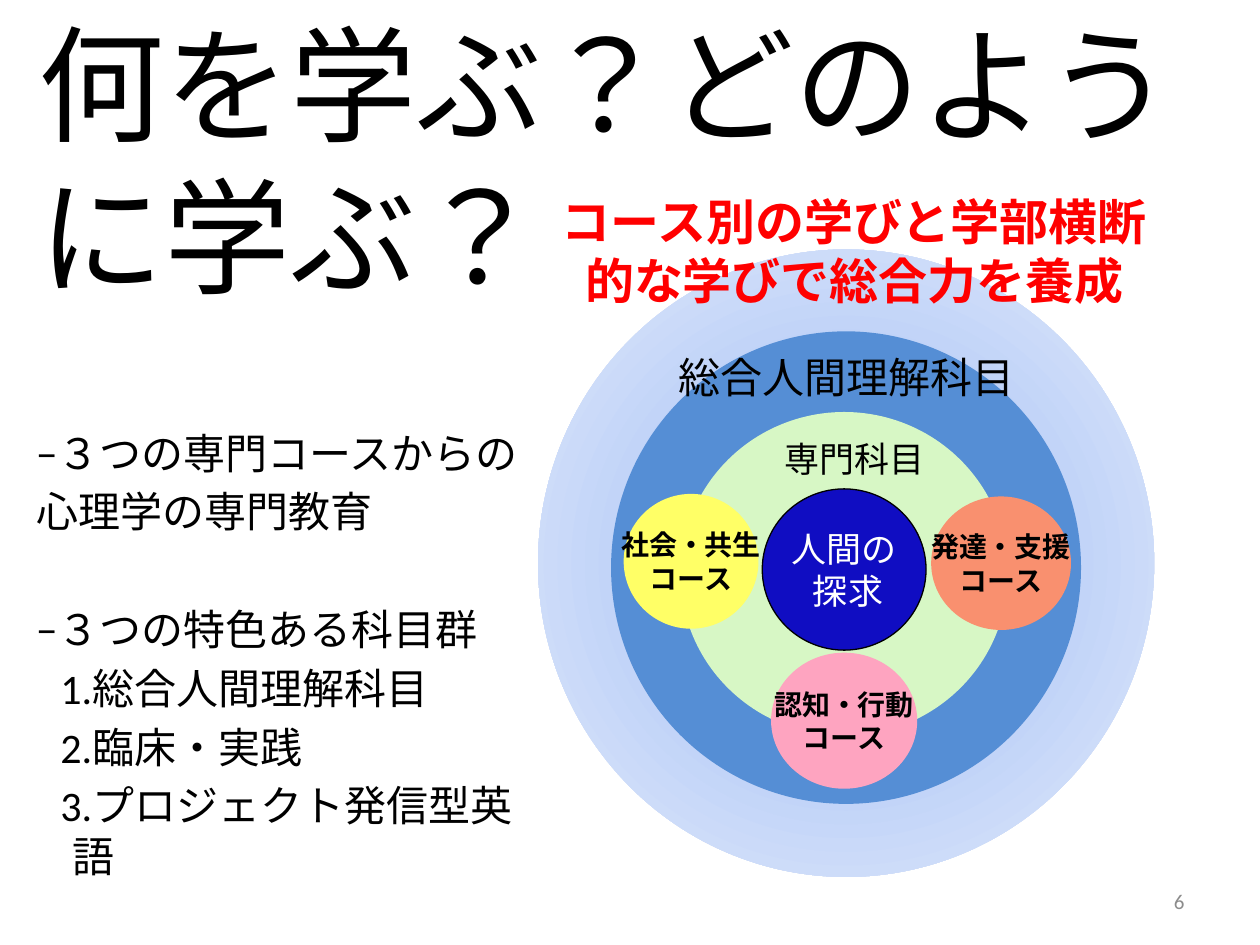
from lxml.etree import SubElement
from pptx import Presentation
from pptx.dml.color import RGBColor
from pptx.enum.lang import MSO_LANGUAGE_ID as Language
from pptx.enum.shapes import MSO_SHAPE
from pptx.enum.text import MSO_ANCHOR as Anchor, PP_ALIGN as Align
from pptx.oxml import parse_xml
from pptx.oxml.ns import nsdecls, qn
from pptx.util import Inches, Pt

COLORS = {
    "black": "000000", "white": "FFFFFF", "red": "FF0000", "gray": "8C8C8C",
    "halo_inner": "98B9F6", "halo_middle": "C0D3F8", "halo_outer": "E0E9FB",
    "blue": "558ED5", "green": "D7F7C5", "pink": "FEA4C0",
    "orange": "F9906F", "yellow": "FFFF66", "navy": "100DC2",
}


def rgb(name):
    return RGBColor.from_string(COLORS[name])


def add_span(para, text, size, color="black", bold=False, font="Arial"):
    span = para.add_run()
    span.text = text
    span.font.name = font
    span.font.size = Pt(size)
    span.font.bold = bold
    span.font.color.rgb = rgb(color)
    span.font.language_id = Language.JAPANESE
    # Japanese characters take the East Asian typeface
    SubElement(span.font._element, qn("a:ea"), typeface="Calibri")


def write_lines(shape, lines, size, align=Align.LEFT, anchor=Anchor.TOP,
                wrap=True, **style):
    frame = shape.text_frame
    frame.word_wrap = wrap
    frame.vertical_anchor = anchor
    for index, line in enumerate(lines):
        para = frame.paragraphs[0] if index == 0 else frame.add_paragraph()
        para.alignment = align
        add_span(para, line, size, **style)
    return frame


def add_text(page, bounds, lines, size, **style):
    box = page.shapes.add_textbox(*map(Inches, bounds))
    return write_lines(box, lines, size, **style)


def add_circle(page, bounds, color):
    circle = page.shapes.add_shape(MSO_SHAPE.OVAL, *map(Inches, bounds))
    circle.shadow.inherit = False
    circle.fill.solid()
    circle.fill.fore_color.rgb = rgb(color)
    circle.line.fill.background()
    return circle


def add_label_circle(page, bounds, fill, lines, size, **style):
    circle = add_circle(page, bounds, fill)
    write_lines(circle, lines, size, align=Align.CENTER,
                anchor=Anchor.MIDDLE, wrap=False, **style)
    return circle


def set_radial_fill(shape, names):
    step = 100000 // (len(names) - 1)
    stops = "".join(
        f'<a:gs pos="{index * step}"><a:srgbClr val="{COLORS[name]}"/></a:gs>'
        for index, name in enumerate(names))
    gradient = parse_xml(
        f'<a:gradFill {nsdecls("a")} rotWithShape="1"><a:gsLst>{stops}</a:gsLst>'
        '<a:path path="circle">'
        '<a:fillToRect l="50000" t="50000" r="50000" b="50000"/>'
        '</a:path></a:gradFill>')
    properties = shape._element.spPr
    properties.replace(properties.find(qn("a:solidFill")), gradient)


def set_indent(para, left, first, numbered=False):
    properties = para._p.get_or_add_pPr()
    properties.set("marL", str(Inches(left)))
    properties.set("indent", str(Inches(first)))
    if numbered:
        SubElement(properties, qn("a:buAutoNum"), type="arabicPeriod")


def add_outline(page):
    lines = ["−３つの専門コースからの", "心理学の専門教育", "−３つの特色ある科目群",
             "総合人間理解科目", "臨床・実践", "プロジェクト発信型英語"]
    frame = add_text(page, (0.19, 3.34, 4.06, 4), lines, 24)
    for index, para in enumerate(frame.paragraphs):
        if index:
            para.space_before = Pt(38.5 if index == 2 else 4.8)
        if index == 2:
            set_indent(para, 0.29, -0.29)
        elif index > 2:
            set_indent(para, 0.29, -0.1, numbered=True)


def add_rings(page):
    halo = add_circle(page, (4.27, 1.98, 4.89, 4.98), "halo_outer")
    set_radial_fill(halo, ["halo_inner", "halo_middle", "halo_outer"])
    add_circle(page, (4.85, 2.63, 3.73, 3.75), "blue")
    add_circle(page, (5.4, 3.27, 2.6, 2.57), "green")


def add_courses(page):
    courses = [
        ("認知・行動", (6.12, 5.18, 1.16, 1.08), "pink"),
        ("発達・支援", (7.39, 3.94, 1.11, 1.06), "orange"),
        ("社会・共生", (4.95, 3.92, 1.07, 1.07), "yellow"),
    ]
    for name, bounds, fill in courses:
        add_label_circle(page, bounds, fill, [name, "コース"], 16, bold=True)


def add_core(page):
    core = add_label_circle(page, (6.05, 3.88, 1.3, 1.28), "navy",
                            ["人間の", " 探求"], 20, color="white")
    core.line.color.rgb = rgb("black")
    core.line.width = Pt(0.75)


def main():
    deck = Presentation()
    deck.slide_width, deck.slide_height = Inches(10), Inches(7.5)
    page = deck.slides.add_slide(deck.slide_layouts[6])

    # Outline and title
    add_outline(page)
    add_text(page, (0.21, 0.63, 9.79, 1.25), ["何を学ぶ？どのように学ぶ？"], 72,
             anchor=Anchor.MIDDLE)

    # Concentric curriculum diagram
    add_rings(page)
    add_courses(page)
    add_core(page)
    add_text(page, (6.1, 3.42, 1.36, 0.44), ["専門科目"], 20, align=Align.CENTER)
    add_text(page, (5.22, 2.74, 3, 0.5), ["総合人間理解科目"], 24,
             align=Align.CENTER)

    # Headline and page number
    add_text(page, (4.2, 1.47, 5.16, 1.04),
             ["コース別の学びと学部横断的な学びで総合力を養成"], 28,
             align=Align.CENTER, anchor=Anchor.MIDDLE, color="red", bold=True)
    add_text(page, (7.17, 6.95, 2.33, 0.4), ["6"], 12, align=Align.RIGHT,
             anchor=Anchor.MIDDLE, color="gray", font="Calibri")
    deck.save("out.pptx")


if __name__ == "__main__":
    main()
